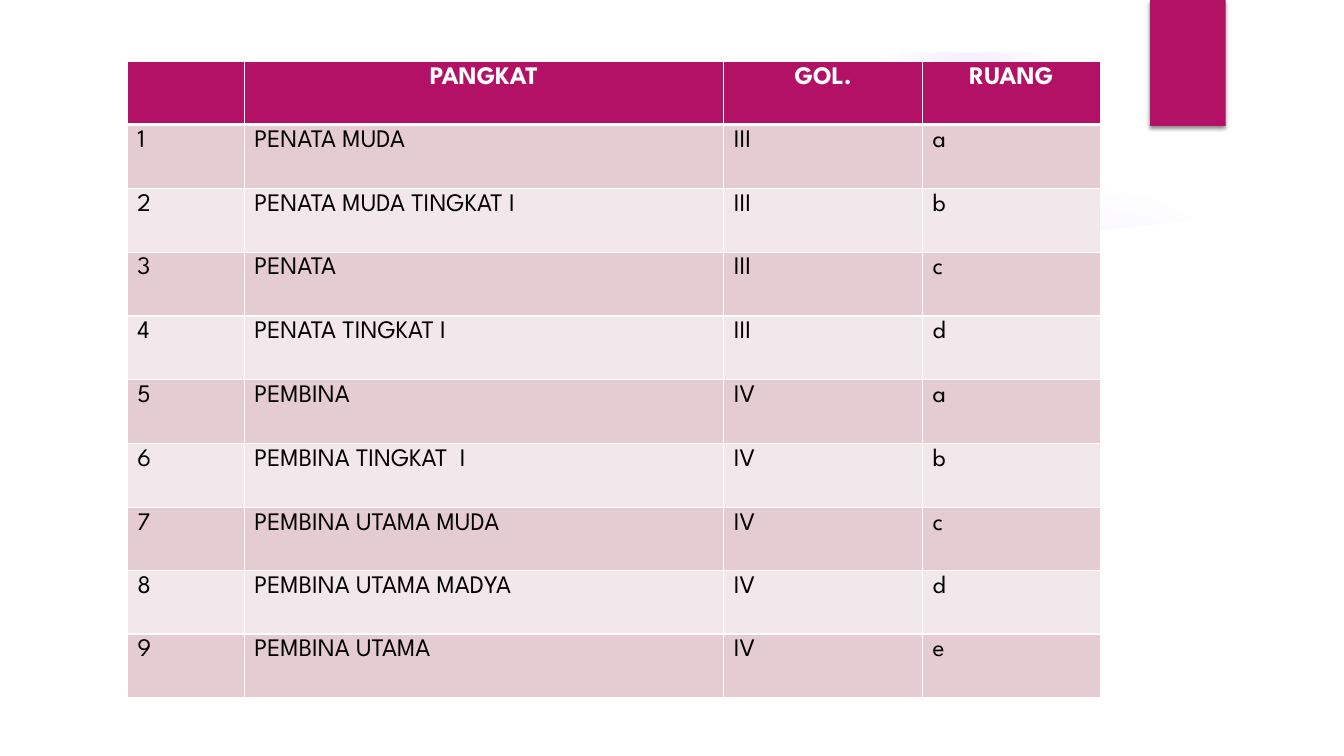
import pptx
import pptx.dml.color
import pptx.enum.shapes
import pptx.enum.text
import pptx.oxml
import pptx.util

Pt = pptx.util.Pt
RGBColor = pptx.dml.color.RGBColor
Shapes = pptx.enum.shapes.MSO_SHAPE
Align = pptx.enum.text.PP_ALIGN

# Content
HEADER = ("", "PANGKAT", "GOL.", "RUANG")
RANKS = [
    ("PENATA MUDA", "III", "a"),
    ("PENATA MUDA TINGKAT I", "III", "b"),
    ("PENATA", "III", "c"),
    ("PENATA TINGKAT I", "III", "d"),
    ("PEMBINA", "IV", "a"),
    ("PEMBINA TINGKAT  I", "IV", "b"),
    ("PEMBINA UTAMA MUDA", "IV", "c"),
    ("PEMBINA UTAMA MADYA", "IV", "d"),
    ("PEMBINA UTAMA", "IV", "e"),
]
ROWS = [HEADER] + [(str(number), *rank) for number, rank in enumerate(RANKS, 1)]

# Style and geometry, in points
FONT = "League Spartan"
MAGENTA = RGBColor(0xB3, 0x11, 0x66)
DARK_BAND = RGBColor(0xE5, 0xCC, 0xD3)
LIGHT_BAND = RGBColor(0xF2, 0xE7, 0xEA)
VIOLET = RGBColor(0x9B, 0x6B, 0xF2)
WHITE = RGBColor(0xFF, 0xFF, 0xFF)
BLACK = RGBColor(0x00, 0x00, 0x00)
SLIDE_WIDTH, SLIDE_HEIGHT = 960, 540
TABLE_LEFT, TABLE_TOP = 91, 44
COLUMN_WIDTHS = [83.5, 342.5, 142, 127]
ROW_HEIGHTS = [45] + [45.6] * 6 + [45.2] * 3
# Glows: left, top, diameter, (position %, opacity %) stops
GLOWS = [
    (677.5, 132, 222, [(0, 7), (36, 6), (69, 0)]),
    (630, 1, 126, [(0, 14), (36, 7), (73, 0)]),
]
PANEL_EDGE = [(36, 147), (180, 163), (320, 173), (480, 178), (620, 177),
              (720, 171), (803, 163), (864, 156), (924, 147)]
DRAWING = 'xmlns:a="http://schemas.openxmlformats.org/drawingml/2006/main"'


def paint(shape, color):
    shape.shadow.inherit = False
    shape.fill.solid()
    shape.fill.fore_color.rgb = color
    shape.line.fill.background()


def add_block(kind, left, top, width, height, color):
    shape = slide.shapes.add_shape(kind, Pt(left), Pt(top), Pt(width), Pt(height))
    paint(shape, color)
    return shape


def add_glow(left, top, diameter, stops):
    glow = add_block(Shapes.OVAL, left, top, diameter, diameter, VIOLET)
    stop_xml = "".join(
        f'<a:gs pos="{position * 1000}"><a:srgbClr val="{VIOLET}">'
        f'<a:alpha val="{opacity * 1000}"/></a:srgbClr></a:gs>'
        for position, opacity in stops)
    gradient = pptx.oxml.parse_xml(
        f'<a:gradFill {DRAWING}><a:gsLst>{stop_xml}</a:gsLst><a:path path="circle">'
        '<a:fillToRect l="50000" t="50000" r="50000" b="50000"/></a:path></a:gradFill>')
    properties = glow.element.spPr
    properties.replace(properties.find(pptx.oxml.ns.qn("a:solidFill")), gradient)


def add_borders(cell, top, bottom):
    properties = cell._tc.get_or_add_tcPr()
    for side, width in (("L", 1), ("R", 1), ("T", top), ("B", bottom)):
        properties.append(pptx.oxml.parse_xml(
            f'<a:ln{side} {DRAWING} w="{Pt(width)}"><a:solidFill>'
            f'<a:srgbClr val="{WHITE}"/></a:solidFill></a:ln{side}>'))


presentation = pptx.Presentation()
presentation.slide_width, presentation.slide_height = Pt(SLIDE_WIDTH), Pt(SLIDE_HEIGHT)
slide = presentation.slides.add_slide(presentation.slide_layouts[6])

# Faint glows, trimmed by a curved white panel and a top margin
for glow_values in GLOWS:
    add_glow(*glow_values)
builder = slide.shapes.build_freeform(Pt(36), Pt(504), scale=1.0)
builder.add_line_segments([(Pt(x), Pt(y)) for x, y in PANEL_EDGE + [(924, 504)]])
paint(builder.convert_to_shape(), WHITE)
add_block(Shapes.RECTANGLE, 0, 0, SLIDE_WIDTH, 37.5, WHITE)

# Corner ribbon with a soft shadow
ribbon = add_block(Shapes.RECTANGLE, 821.5, 0, 54, 90, MAGENTA)
ribbon.element.spPr.find(pptx.oxml.ns.qn("a:effectLst")).append(pptx.oxml.parse_xml(
    f'<a:outerShdw {DRAWING} blurRad="{Pt(3)}" dist="{Pt(2)}" dir="5400000" rotWithShape="0">'
    f'<a:srgbClr val="{BLACK}"><a:alpha val="45000"/></a:srgbClr></a:outerShdw>'))

# Rank table
table = slide.shapes.add_table(
    len(ROWS), len(HEADER), Pt(TABLE_LEFT), Pt(TABLE_TOP),
    Pt(sum(COLUMN_WIDTHS)), Pt(sum(ROW_HEIGHTS))).table
for column, width in zip(table.columns, COLUMN_WIDTHS):
    column.width = Pt(width)
for row_index, (values, height) in enumerate(zip(ROWS, ROW_HEIGHTS)):
    table.rows[row_index].height = Pt(height)
    is_header = row_index == 0
    band = MAGENTA if is_header else (LIGHT_BAND, DARK_BAND)[row_index % 2]
    for column_index, value in enumerate(values):
        cell = table.cell(row_index, column_index)
        add_borders(cell, 3 if row_index == 1 else 1, 3 if is_header else 1)
        cell.fill.solid()
        cell.fill.fore_color.rgb = band
        cell.text_frame.text = value
        paragraph = cell.text_frame.paragraphs[0]
        paragraph.alignment = Align.CENTER if is_header else Align.LEFT
        paragraph.font.name = FONT
        paragraph.font.size = Pt(18)
        paragraph.font.bold = is_header
        paragraph.font.color.rgb = WHITE if is_header else BLACK

presentation.save("out.pptx")
